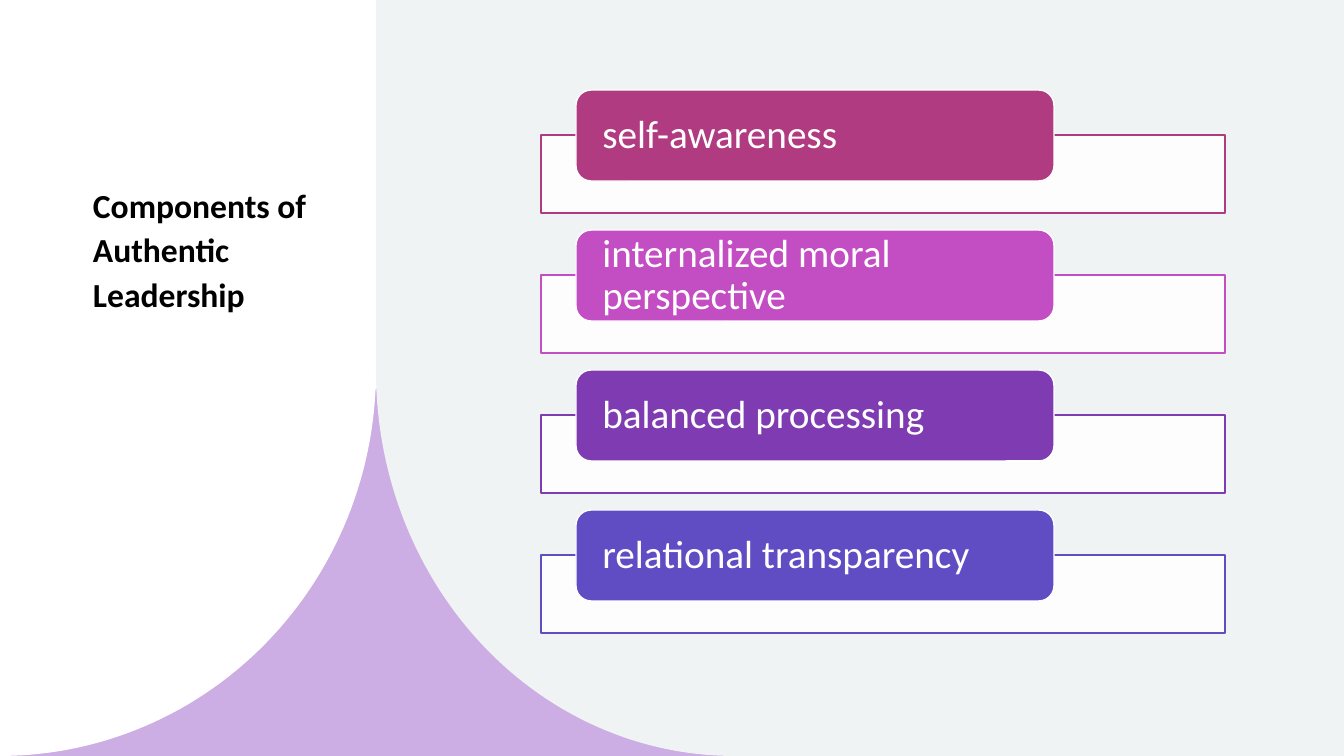
import math
import pptx
import pptx.util
import pptx.dml.color
import pptx.enum.shapes
import pptx.enum.text
import pptx.oxml
import pptx.oxml.ns

SCALE = 914400 / 100.8
KIND = pptx.enum.shapes.MSO_SHAPE
ANCHOR = pptx.enum.text.MSO_ANCHOR
ALIGN = pptx.enum.text.PP_ALIGN


def emu(px):
    return pptx.util.Emu(round(px * SCALE))


def color(text):
    return pptx.dml.color.RGBColor.from_string(text)


def arc(x, y, wide, high, steps=60):
    turns = [math.pi / 2 * i / steps for i in range(steps + 1)]
    return [(x + wide * math.cos(t), y + high * math.sin(t)) for t in turns]


class Deck:
    font = "Calibri"

    def __init__(self, wide, high):
        self.file = pptx.Presentation()
        self.file.slide_width = emu(wide)
        self.file.slide_height = emu(high)
        self.slide = self.file.slides.add_slide(self.file.slide_layouts[6])

    def paint(self, shape, fill, line=None, alpha=None):
        shape.shadow.inherit = False
        shape.fill.solid()
        shape.fill.fore_color.rgb = color(fill)
        if alpha:
            tone = shape.element.spPr.find(".//" + pptx.oxml.ns.qn("a:srgbClr"))
            mark = pptx.oxml.parse_xml(
                f'<a:alpha {pptx.oxml.ns.nsdecls("a")} val="{alpha * 1000}"/>')
            tone.append(mark)
        if line:
            shape.line.color.rgb = color(line)
            shape.line.width = pptx.util.Pt(1)
        else:
            shape.line.fill.background()

    def box(self, kind, x, y, wide, high, fill, line=None, alpha=None):
        shape = self.slide.shapes.add_shape(
            kind, emu(x), emu(y), emu(wide), emu(high))
        self.paint(shape, fill, line, alpha)
        return shape

    def panel(self, points, fill):
        ends = [(emu(x), emu(y)) for x, y in points]
        form = self.slide.shapes.build_freeform(*ends[0], scale=1.0)
        form.add_line_segments(ends[1:], close=True)
        self.paint(form.convert_to_shape(), fill)

    def label(self, x, y, wide, high):
        return self.slide.shapes.add_textbox(
            emu(x), emu(y), emu(wide), emu(high))

    def words(self, shape, text, size, ink, space, anchor, side, edge, bold=False):
        frame = shape.text_frame
        frame.word_wrap = True
        frame.vertical_anchor = anchor
        frame.margin_left = frame.margin_right = emu(side)
        frame.margin_top = frame.margin_bottom = emu(edge)
        para = frame.paragraphs[0]
        para.alignment = ALIGN.LEFT
        para.line_spacing = space
        run = para.add_run()
        run.text = text
        run.font.name = self.font
        run.font.size = pptx.util.Pt(size)
        run.font.bold = bold
        run.font.color.rgb = color(ink)


def main():
    wide, high, split, bend = 1344, 756, 376, 371
    deck = Deck(wide, high)
    deck.box(KIND.RECTANGLE, 0, 389, 743, high - 389, "CCADE4")
    drop = high - bend
    deck.panel([(0, 0), (split, 0)] + arc(0, bend, split, drop), "FFFFFF")
    title = deck.label(83, 176, 265, 275)
    deck.words(title, "Components of Authentic Leadership", 24, "000000",
               1.1, ANCHOR.TOP, 10, 5, True)
    foot = 734
    deck.panel([(wide, high), (wide, 0), (split, 0)]
               + arc(foot, bend, split - foot, drop), "F0F3F3")

    parts = [
        ("self-awareness", "B13B81"),
        ("internalized moral perspective", "C34DC3"),
        ("balanced processing", "7F3BB1"),
        ("relational transparency", "604DC3"),
    ]
    for row, (name, tint) in enumerate(parts):
        top = 90 + 140 * row
        deck.box(KIND.RECTANGLE, 541, top + 45, 684, 78, "FFFFFF", tint, 90)
        pill = deck.box(KIND.ROUNDED_RECTANGLE, 576, top, 478, 91, tint, "FFFFFF")
        deck.words(pill, name, 28, "FFFFFF", 0.9, ANCHOR.MIDDLE, 22, 0)
    deck.file.save("out.pptx")


if __name__ == "__main__":
    main()
